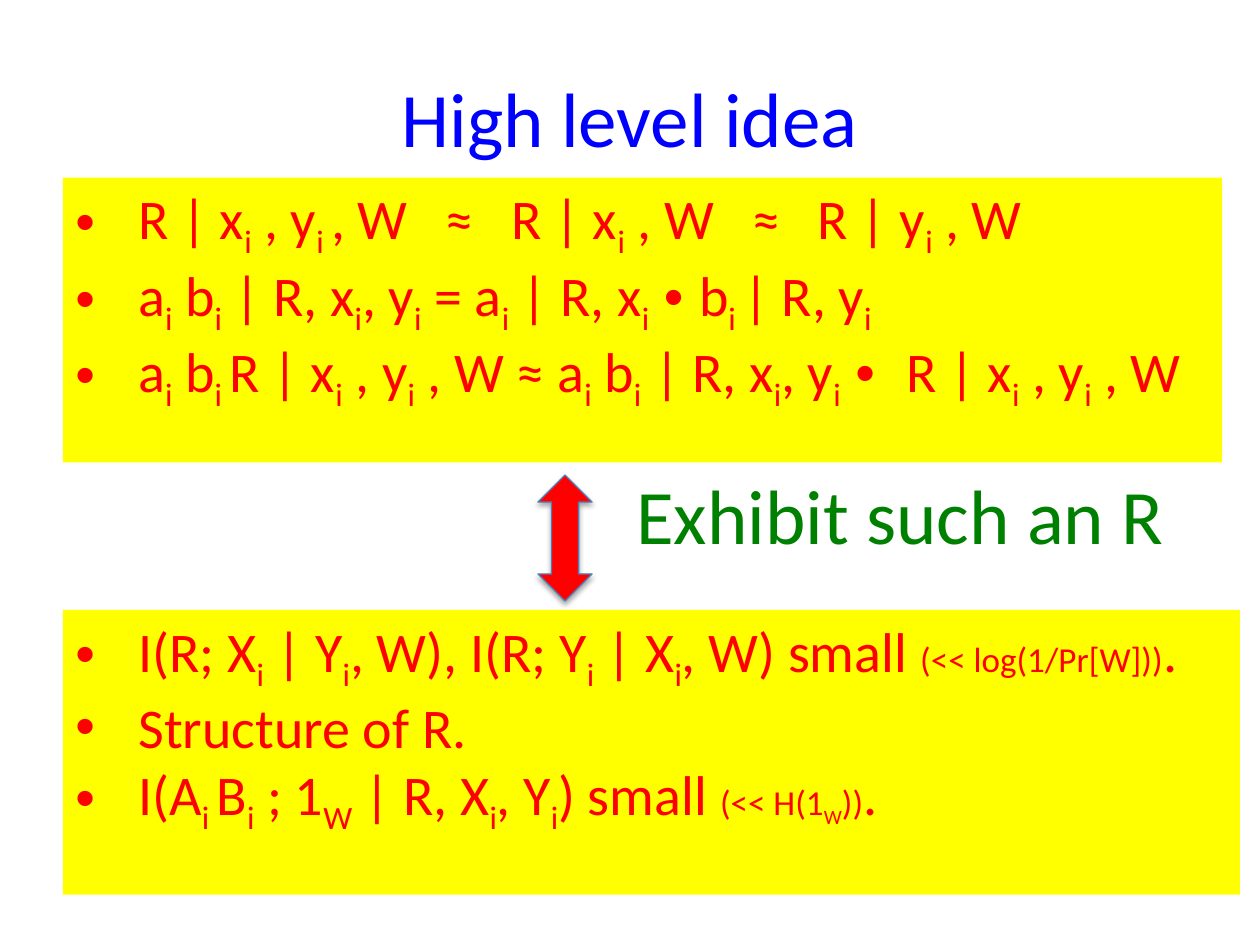
from dataclasses import dataclass
from lxml.etree import SubElement as Sub
from pptx import Presentation
from pptx.dml.color import RGBColor as Rgb
from pptx.enum.shapes import MSO_SHAPE as Shape
from pptx.enum.text import MSO_ANCHOR as Anchor, PP_ALIGN as Align
from pptx.oxml.ns import qn
from pptx.util import Inches, Pt


@dataclass(frozen=True)
class Theme:
    blue: Rgb = Rgb(0, 0, 255)
    red: Rgb = Rgb(255, 0, 0)
    green: Rgb = Rgb(0, 128, 0)
    yellow: Rgb = Rgb(255, 255, 0)
    edge: Rgb = Rgb(0x4B, 0x7E, 0xBC)
    font: str = "Calibri"
    dot: str = "Arial"
    head: int = 44
    body: int = 32
    note: int = 20


@dataclass(frozen=True)
class Box:
    left: float
    top: float
    width: float
    height: float

    def emu(self) -> list:
        return [Inches(v) for v in (self.left, self.top, self.width, self.height)]


@dataclass(frozen=True)
class Label:
    box: Box
    text: str
    color: Rgb
    align: Align
    anchor: Anchor


@dataclass(frozen=True)
class Panel:
    box: Box
    lines: tuple


THEME = Theme()

LABELS = (
    Label(Box(0.5, 0.3, 9, 1.25), "High level idea", THEME.blue,
          Align.CENTER, Anchor.MIDDLE),
    Label(Box(4.95, 3.66, 4.55, 0.84), "Exhibit such an R", THEME.green,
          Align.LEFT, Anchor.TOP),
)

# In a line, _ switches subscript on and off, and ~ switches note size
PANELS = (
    Panel(Box(0.5, 1.41, 9.2, 2.26), (
        "R | x_i_ , y_i _, W   ≈   R | x_i_ , W   ≈   R | y_i_ , W",
        "a_i_ b_i_ | R, x_i_, y_i_ = a_i_ | R, x_i  _• __b_i _| R, y_i_",
        "a_i_ b_i _R | x_i_ , y_i_ , W ≈ a_i_ b_i_ | R, x_i_, y_i  _•  __"
        "R | x_i_ , y_i_ , W",
    )),
    Panel(Box(0.5, 4.84, 9.34, 2.26), (
        "I(R; X_i_ | Y_i_, W), I(R; Y_i_ | X_i_, W) small ~(<< log(1/Pr[W]))~.",
        "Structure of R.",
        "I(A_i _B_i_ ; 1_W_ | R, X_i_, Y_i_) small ~(<< H(1_W_))~.",
    )),
)
ARROW = Box(4.27, 3.77, 0.43, 1)


def add_run(para, text: str, size: int, color: Rgb, face: str = THEME.font):
    run = para.add_run()
    run.text = text
    for key, value in {"size": Pt(size), "name": face}.items():
        setattr(run.font, key, value)
    run.font.color.rgb = color
    return run


def add_label(slide, item: Label) -> None:
    frame = slide.shapes.add_textbox(*item.box.emu()).text_frame
    for key, value in {"word_wrap": True, "vertical_anchor": item.anchor}.items():
        setattr(frame, key, value)
    para = frame.paragraphs[0]
    para.alignment = item.align
    add_run(para, item.text, THEME.head, item.color)


def set_bullet(para) -> None:
    props = para._p.get_or_add_pPr()
    props.set("marL", str(Inches(0.5)))
    props.set("indent", str(Inches(-0.5)))
    Sub(props, qn("a:buFont"), typeface=THEME.dot)
    Sub(props, qn("a:buChar"), char="•")


def add_line(para, line: str) -> None:
    para.alignment = Align.LEFT
    set_bullet(para)
    for i, part in enumerate(line.split("~")):
        size = THEME.note if i % 2 else THEME.body
        for j, bit in enumerate(part.split("_")):
            if not bit:
                continue
            face = THEME.dot if bit.startswith("•") else THEME.font
            run = add_run(para, bit, size, THEME.red, face)
            if j % 2:
                run.font._element.set("baseline", "-25000")


def add_panel(slide, item: Panel) -> None:
    shape = slide.shapes.add_shape(Shape.RECTANGLE, *item.box.emu())
    shape.shadow.inherit = False
    shape.fill.solid()
    shape.fill.fore_color.rgb = THEME.yellow
    shape.line.fill.background()
    frame = shape.text_frame
    for key, value in {"word_wrap": True, "vertical_anchor": Anchor.TOP}.items():
        setattr(frame, key, value)
    for i, line in enumerate(item.lines):
        add_line(frame.add_paragraph() if i else frame.paragraphs[0], line)


def add_arrow(slide, box: Box) -> None:
    shape = slide.shapes.add_shape(Shape.UP_DOWN_ARROW, *box.emu())
    shape.fill.solid()
    shape.fill.fore_color.rgb = THEME.red
    shape.line.color.rgb = THEME.edge
    shape.line.width = Pt(0.75)
    # Soft shadow straight below
    shape.shadow.inherit = False
    effects = shape._element.spPr.find(qn("a:effectLst"))
    shade = Sub(effects, qn("a:outerShdw"), blurRad=str(Pt(3.1)),
                dist=str(Pt(1.8)), dir="5400000", rotWithShape="0")
    color = Sub(shade, qn("a:srgbClr"), val="000000")
    Sub(color, qn("a:alpha"), val="35000")


def main() -> None:
    deck = Presentation()
    deck.slide_width, deck.slide_height = Inches(10), Inches(7.5)
    slide = deck.slides.add_slide(deck.slide_layouts[6])
    title, claim = LABELS
    # Title, the two equivalent panels, then the link between them
    add_label(slide, title)
    for item in PANELS:
        add_panel(slide, item)
    add_arrow(slide, ARROW)
    add_label(slide, claim)
    deck.save("out.pptx")


if __name__ == "__main__":
    main()
